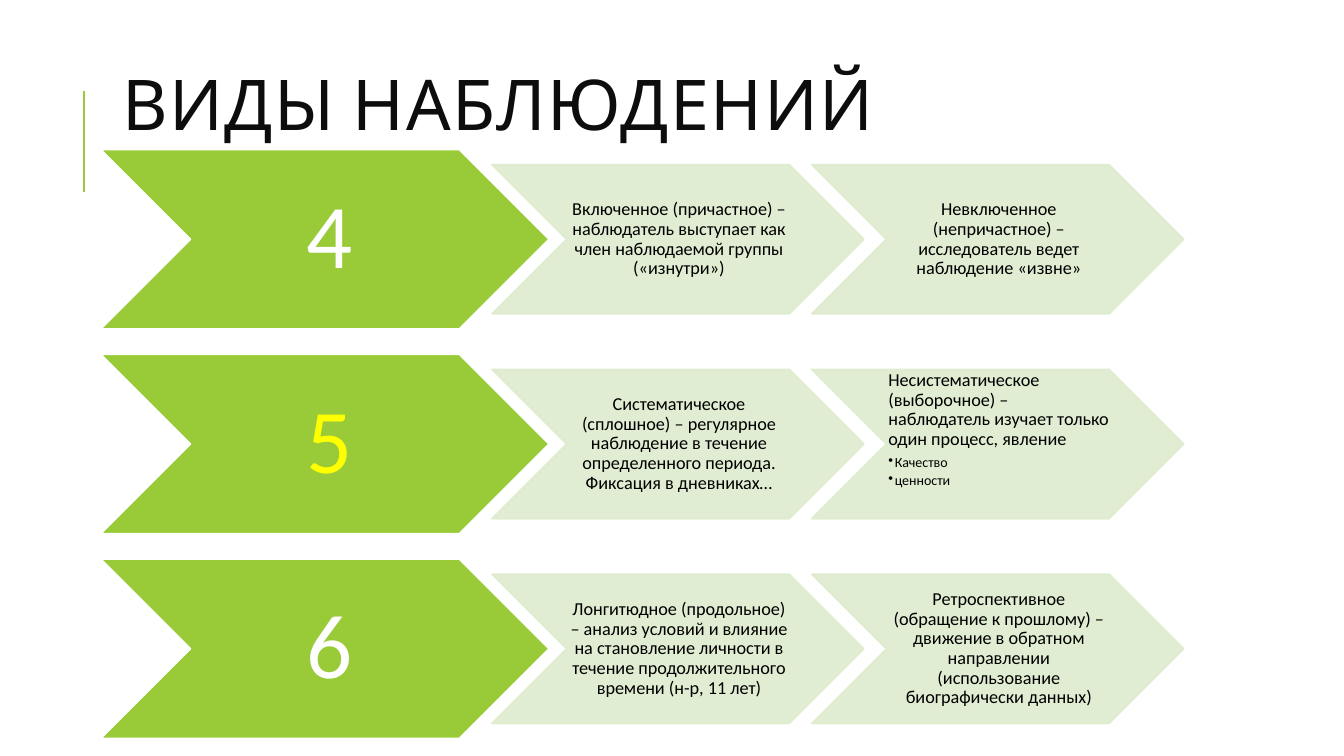
from dataclasses import dataclass

import pptx
import pptx.dml.color
import pptx.enum.dml
import pptx.enum.shapes
import pptx.enum.text
import pptx.oxml
import pptx.oxml.ns
import pptx.util

Cm, Pt = pptx.util.Cm, pptx.util.Pt
RGB = pptx.dml.color.RGBColor.from_string
ALIGN = pptx.enum.text.PP_ALIGN
ANCHOR = pptx.enum.text.MSO_ANCHOR
SHAPE = pptx.enum.shapes.MSO_SHAPE
NS = pptx.oxml.ns.nsdecls("a")


@dataclass(frozen=True)
class Theme:
    accent: str = "99CB38"
    pale: str = "DEECCE"
    white: str = "FFFFFF"
    yellow: str = "FFFF00"
    black: str = "000000"
    heading: str = "0D0D0D"
    title_font: str = "Cabin"
    body_font: str = "Calibri"
    title_size: int = 50
    number_size: int = 65
    text_size: int = 13
    item_size: int = 10


@dataclass(frozen=True)
class Chevron:
    width: float
    height: float
    fill: str
    line: str
    insets: tuple
    alpha: int = 100


def apply(obj, values):
    for name, value in values.items():
        setattr(obj, name, value)


class SlideBuilder:
    def __init__(self, prs, theme):
        self.theme = theme
        self.s = prs.slides.add_slide(prs.slide_layouts[5])

    def style_run(self, r, font, size, color):
        apply(r.font, {"name": font, "size": Pt(size)})
        r.font.color.rgb = RGB(color)

    def title(self, text, left, top, width, height):
        sp = self.s.shapes.title
        apply(sp, {"left": Cm(left), "top": Cm(top), "width": Cm(width), "height": Cm(height)})
        tf = sp.text_frame
        apply(tf, {"word_wrap": True, "vertical_anchor": ANCHOR.MIDDLE,
                   "auto_size": pptx.enum.text.MSO_AUTO_SIZE.NONE})
        p = tf.paragraphs[0]
        apply(p, {"alignment": ALIGN.LEFT, "line_spacing": 0.8})
        r = p.add_run()
        r.text = text
        self.style_run(r, self.theme.title_font, self.theme.title_size, self.theme.heading)
        r.font._element.set("spc", "100")

    def line(self, x1, y1, x2, y2):
        sp = self.s.shapes.add_connector(
            pptx.enum.shapes.MSO_CONNECTOR.STRAIGHT, Cm(x1), Cm(y1), Cm(x2), Cm(y2))
        sp.line.color.rgb = RGB(self.theme.accent)
        sp.line.width = Pt(1.5)
        sp._element.spPr.append(pptx.oxml.parse_xml(f"<a:effectLst {NS}/>"))

    def chevron(self, kind, left, middle, anchor=ANCHOR.MIDDLE):
        """Draw a chevron centred on the height middle and return its text frame."""
        sp = self.s.shapes.add_shape(SHAPE.CHEVRON, Cm(left), Cm(middle - kind.height / 2),
                                     Cm(kind.width), Cm(kind.height))
        sp.shadow.inherit = False
        sp.fill.solid()
        sp.fill.fore_color.rgb = RGB(kind.fill)
        sp.line.color.rgb = RGB(kind.line)
        sp.line.width = Pt(1.25)
        if kind.alpha < 100:
            for color in sp._element.spPr.iter(pptx.oxml.ns.qn("a:srgbClr")):
                color.append(pptx.oxml.parse_xml(f'<a:alpha {NS} val="{kind.alpha * 1000}"/>'))
        tf = sp.text_frame
        side, edge = kind.insets
        apply(tf, {"word_wrap": True, "vertical_anchor": anchor, "margin_left": Cm(side),
                   "margin_right": 0, "margin_top": Cm(edge), "margin_bottom": Cm(edge)})
        return tf

    def paragraph(self, p, text, size, color, align=ALIGN.CENTER, after=0.35):
        apply(p, {"alignment": align, "line_spacing": 0.9, "space_after": Pt(size * after)})
        r = p.add_run()
        r.text = text
        self.style_run(r, self.theme.body_font, size, color)

    def bullet(self, p, text):
        self.paragraph(p, text, self.theme.item_size, self.theme.black, ALIGN.LEFT, 0.15)
        p.level = 1
        pPr = p._p.get_or_add_pPr()
        indent = Cm(0.16)
        pPr.set("marL", str(indent))
        pPr.set("indent", str(-indent))
        pPr.append(pptx.oxml.parse_xml(f'<a:buChar {NS} char="•"/>'))

    def number(self, kind, left, middle, text, color):
        tf = self.chevron(kind, left, middle)
        self.paragraph(tf.paragraphs[0], text, self.theme.number_size, color)

    def description(self, kind, left, middle, text, items=()):
        """Write a centred text, or a left-aligned one when a list follows it."""
        align, anchor = (ALIGN.LEFT, ANCHOR.TOP) if items else (ALIGN.CENTER, ANCHOR.MIDDLE)
        tf = self.chevron(kind, left, middle, anchor)
        self.paragraph(tf.paragraphs[0], text, self.theme.text_size, self.theme.black, align)
        for item in items:
            self.bullet(tf.add_paragraph(), item)


def main():
    prs = pptx.Presentation()
    apply(prs, {"slide_width": Cm(33.87), "slide_height": Cm(19.05)})
    theme = Theme()
    slide = SlideBuilder(prs, theme)
    slide.line(2.11, 4.83, 2.11, 2.29)
    slide.title("ВИДЫ НАБЛЮДЕНИЙ", 2.84, 1.63, 27, 2.31)

    number = Chevron(11.3, 4.52, theme.accent, theme.white, (0.23, 0.13))
    kind = Chevron(9.37, 3.76, theme.pale, theme.pale, (0.05, 0.03), 90)
    rows = [
        ("4", theme.white, [
            ("Включенное (причастное) – наблюдатель выступает как член "
             "наблюдаемой группы («изнутри»)",),
            ("Невключенное (непричастное) – исследователь ведет наблюдение «извне»",)]),
        ("5", theme.yellow, [
            ("Систематическое (сплошное) – регулярное наблюдение в течение "
             "определенного периода. Фиксация в дневниках…",),
            ("Несистематическое (выборочное) – наблюдатель изучает только один "
             "процесс, явление", ("Качество", "ценности"))]),
        ("6", theme.white, [
            ("Лонгитюдное (продольное) – анализ условий и влияние на становление "
             "личности в течение продолжительного времени (н-р, 11 лет)",),
            ("Ретроспективное (обращение к прошлому) – движение в обратном "
             "направлении (использование биографически данных)",)]),
    ]
    first_middle, row_step = 6.03, 5.16
    first_left, column_step = 12.4, 8.06
    for i, (digit, color, descriptions) in enumerate(rows):
        middle = first_middle + i * row_step
        slide.number(number, 2.54, middle, digit, color)
        for j, description in enumerate(descriptions):
            slide.description(kind, first_left + j * column_step, middle, *description)
    prs.save("out.pptx")


if __name__ == "__main__":
    main()
